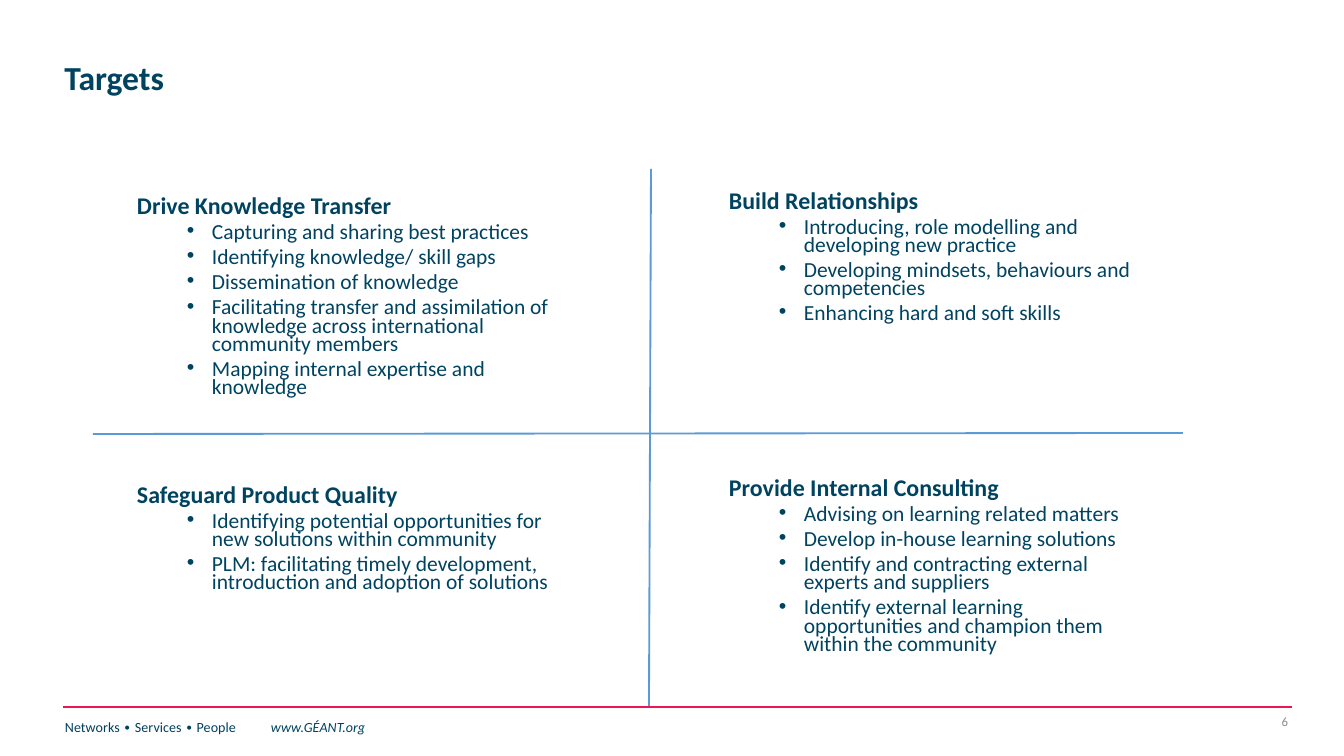
from lxml.etree import SubElement
from pptx import Presentation
from pptx.dml.color import RGBColor
from pptx.enum.shapes import MSO_CONNECTOR
from pptx.enum.text import MSO_ANCHOR, PP_ALIGN
from pptx.oxml.ns import qn
from pptx.util import Pt

SCALE = 914400 / 134.4
FONT = "Calibri"
NAVY, HEADING, FOOTER, GREY = "004361", "004360", "003F5E", "8C8C8C"
RED, BLUE = "ED1556", "5B9BD5"

TITLE = "Targets"
QUADRANTS = [
    ((137, 198, 425, 215), "Drive Knowledge Transfer", [
        "Capturing and sharing best practices",
        "Identifying knowledge/ skill gaps",
        "Dissemination of knowledge",
        "Facilitating transfer and assimilation of knowledge across international community members",
        "Mapping internal expertise and knowledge",
    ]),
    ((729, 193, 412, 145), "Build Relationships", [
        "Introducing, role modelling and developing new practice",
        "Developing mindsets, behaviours and competencies",
        "Enhancing hard and soft skills",
    ]),
    ((137, 487, 425, 120), "Safeguard Product Quality", [
        "Identifying potential opportunities for new solutions within community",
        "PLM: facilitating timely development, introduction and adoption of solutions",
    ]),
    ((729, 480, 412, 190), "Provide Internal Consulting", [
        "Advising on learning related matters",
        "Develop in-house learning solutions",
        "Identify and contracting external experts and suppliers",
        "Identify external learning opportunities and champion them within the community",
    ]),
]
LINES = [
    ((63, 707, 1292, 707), RED),
    ((93, 434, 1183, 433), BLUE),
    ((651, 169, 649, 706), BLUE),
]
MOTTO, WEBSITE, PAGE = "Networks ∙ Services ∙ People", "www.GÉANT.org", "6"


def px(length):
    return round(length * SCALE)


def color(value):
    return RGBColor.from_string(value)


def style(font, size, value, bold=False, italic=False):
    font.name, font.size, font.bold, font.italic = FONT, Pt(size), bold, italic
    font.color.rgb = color(value)


def add_text_box(slide, box, anchor=MSO_ANCHOR.TOP):
    frame = slide.shapes.add_textbox(*map(px, box)).text_frame
    frame.word_wrap = True
    frame.vertical_anchor = anchor
    frame.margin_left = frame.margin_right = frame.margin_top = frame.margin_bottom = 0
    return frame


def add_line(slide, ends, value):
    line = slide.shapes.add_connector(MSO_CONNECTOR.STRAIGHT, *map(px, ends))
    line.line.color.rgb = color(value)
    line.line.width = Pt(1)
    SubElement(line._element.spPr, qn("a:effectLst"))


def add_title(slide):
    title = slide.shapes.title
    title.left, title.top, title.width, title.height = map(px, (51, 7, 1059, 146))
    title.text_frame.text = TITLE
    title.text_frame.vertical_anchor = MSO_ANCHOR.MIDDLE
    paragraph = title.text_frame.paragraphs[0]
    paragraph.alignment = PP_ALIGN.LEFT
    paragraph.line_spacing = 0.9
    style(paragraph.runs[0].font, 18, NAVY, bold=True)


def add_quadrant(slide, box, heading, points):
    frame = add_text_box(slide, box)
    frame.text = heading
    paragraph = frame.paragraphs[0]
    paragraph.line_spacing = 0.7
    style(paragraph.runs[0].font, 12.8, HEADING, bold=True)
    for point in points:
        paragraph = frame.add_paragraph()
        paragraph.text = point
        paragraph.level = 1
        paragraph.line_spacing = 0.7
        paragraph.space_before = Pt(3.8)
        properties = paragraph._p.get_or_add_pPr()
        properties.set("marL", str(px(75)))
        properties.set("indent", str(px(-25)))
        SubElement(properties, qn("a:buFont"), typeface="Arial")
        SubElement(properties, qn("a:buChar"), char="•")
        style(paragraph.runs[0].font, 11.5, NAVY)


def add_footer(slide):
    paragraph = add_text_box(slide, (65, 719, 432, 34)).paragraphs[0]
    tabs = SubElement(paragraph._p.get_or_add_pPr(), qn("a:tabLst"))
    SubElement(tabs, qn("a:tab"), pos=str(px(206)), algn="l")
    for text, value, italic in ((MOTTO + "\t", FOOTER, False), (WEBSITE, NAVY, True)):
        run = paragraph.add_run()
        run.text = text
        style(run.font, 7.5, value, italic=italic)

    frame = add_text_box(slide, (1219, 706, 69, 31), MSO_ANCHOR.MIDDLE)
    frame.text = PAGE
    frame.paragraphs[0].alignment = PP_ALIGN.RIGHT
    style(frame.paragraphs[0].runs[0].font, 6.8, GREY)


def main():
    """Build the targets slide with its four quadrants."""
    presentation = Presentation()
    presentation.slide_width, presentation.slide_height = px(1344), px(756)
    slide = presentation.slides.add_slide(presentation.slide_layouts[5])
    add_title(slide)
    add_footer(slide)
    for box, heading, points in QUADRANTS:
        add_quadrant(slide, box, heading, points)
    for ends, value in LINES:
        add_line(slide, ends, value)
    presentation.save("out.pptx")


if __name__ == "__main__":
    main()
